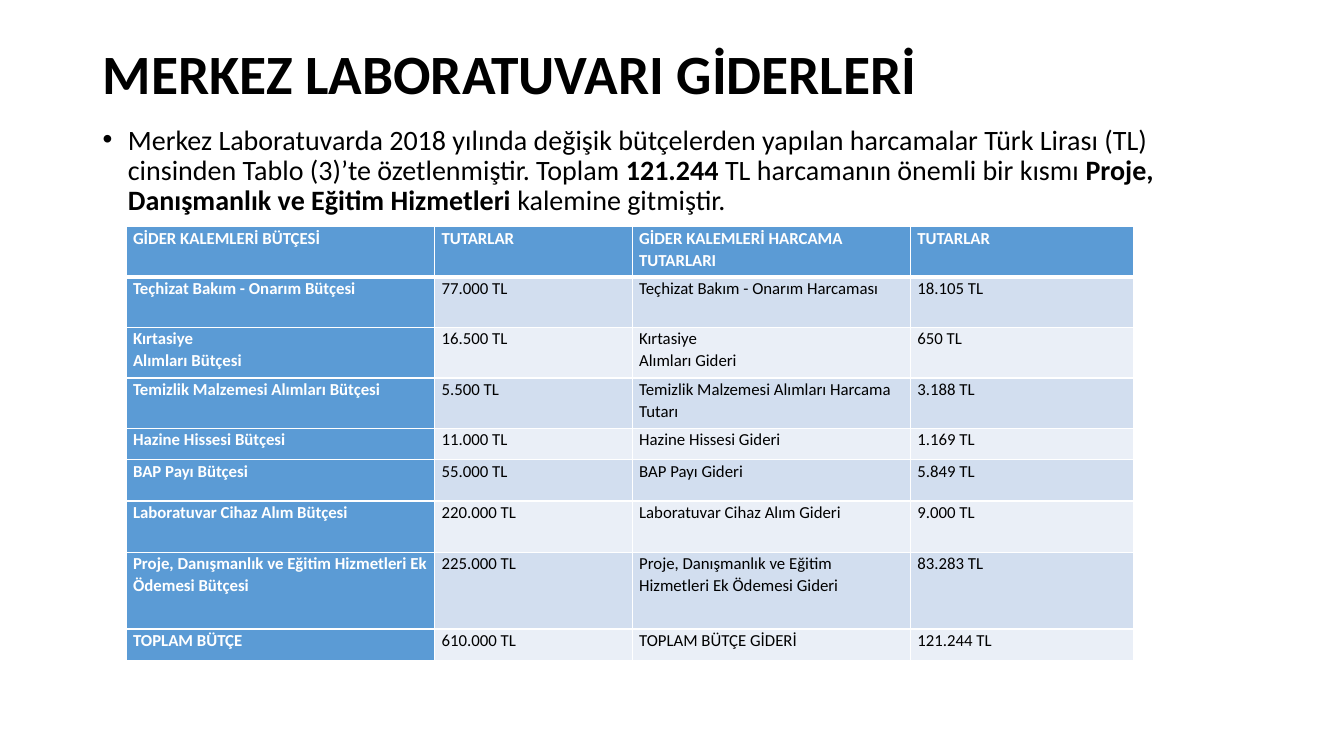
from lxml import etree
from pptx import Presentation
from pptx.dml.color import RGBColor
from pptx.enum.text import MSO_ANCHOR
from pptx.oxml.ns import qn
from pptx.util import Inches, Pt

FONT = "Calibri"
BLACK = RGBColor(0x00, 0x00, 0x00)
WHITE = RGBColor(0xFF, 0xFF, 0xFF)
HEADER_BLUE = RGBColor(0x5B, 0x9B, 0xD5)
BAND_DARK = RGBColor(0xD2, 0xDE, 0xEF)
BAND_LIGHT = RGBColor(0xEA, 0xEF, 0xF7)

TITLE = "MERKEZ LABORATUVARI GİDERLERİ"
SUMMARY = [
    ("Merkez Laboratuvarda 2018 yılında değişik bütçelerden yapılan harcamalar "
     "Türk Lirası (TL) cinsinden Tablo (3)’te özetlenmiştir. Toplam ", False),
    ("121.244", True),
    (" TL harcamanın önemli bir kısmı ", False),
    ("Proje, Danışmanlık ve Eğitim Hizmetleri ", True),
    ("kalemine gitmiştir.", False),
]

COLUMN_WIDTHS = [3.06, 1.96, 2.76, 2.21]
ROW_HEIGHTS = [0.5, 0.5, 0.5, 0.5, 0.31, 0.41, 0.51, 0.76, 0.31]
EXPENSES = [
    ("GİDER KALEMLERİ BÜTÇESİ", "TUTARLAR",
     "GİDER KALEMLERİ HARCAMA TUTARLARI", "TUTARLAR"),
    ("Teçhizat Bakım - Onarım Bütçesi", "77.000 TL",
     "Teçhizat Bakım - Onarım Harcaması", "18.105 TL"),
    ("Kırtasiye\nAlımları Bütçesi", "16.500 TL",
     "Kırtasiye\nAlımları Gideri", "650 TL"),
    ("Temizlik Malzemesi Alımları Bütçesi", "5.500 TL",
     "Temizlik Malzemesi Alımları Harcama Tutarı", "3.188 TL"),
    ("Hazine Hissesi Bütçesi", "11.000 TL", "Hazine Hissesi Gideri", "1.169 TL"),
    ("BAP Payı Bütçesi", "55.000 TL", "BAP Payı Gideri", "5.849 TL"),
    ("Laboratuvar Cihaz Alım Bütçesi", "220.000 TL",
     "Laboratuvar Cihaz Alım Gideri", "9.000 TL"),
    ("Proje, Danışmanlık ve Eğitim Hizmetleri Ek Ödemesi Bütçesi", "225.000 TL",
     "Proje, Danışmanlık ve Eğitim Hizmetleri Ek Ödemesi Gideri", "83.283 TL"),
    ("TOPLAM BÜTÇE", "610.000 TL", "TOPLAM BÜTÇE GİDERİ", "121.244 TL"),
]


def add_run(paragraph, content, size, color=BLACK, bold=False):
    run = paragraph.add_run()
    run.text = content
    run.font.name = FONT
    run.font.size = Pt(size)
    run.font.color.rgb = color
    run.font.bold = bold


def add_text_frame(slide, top, height, anchor):
    """Add a wrapping text box in the slide's main column."""
    box = slide.shapes.add_textbox(Inches(0.92), Inches(top), Inches(11.5), Inches(height))
    frame = box.text_frame
    frame.word_wrap = True
    frame.vertical_anchor = anchor
    frame.paragraphs[0].line_spacing = 0.9
    return frame


def set_bullet(paragraph, indent):
    properties = paragraph._p.get_or_add_pPr()
    properties.set("marL", str(indent))
    properties.set("indent", str(-indent))
    etree.SubElement(properties, qn("a:buFont"), typeface="Arial")
    etree.SubElement(properties, qn("a:buChar"), char="•")


def set_borders(cell, top, bottom):
    """Draw white cell borders; top and bottom are widths in points."""
    properties = cell._tc.get_or_add_tcPr()
    for side, width in (("L", 1), ("R", 1), ("T", top), ("B", bottom)):
        line = etree.SubElement(properties, qn(f"a:ln{side}"), w=str(Pt(width)))
        fill = etree.SubElement(line, qn("a:solidFill"))
        etree.SubElement(fill, qn("a:srgbClr"), val=str(WHITE))


def fill_cell(cell, content, row, column):
    heading = row == 0 or column == 0
    cell.margin_left = cell.margin_right = Inches(0.07)
    cell.margin_top = cell.margin_bottom = Inches(0)
    set_borders(cell, top=3 if row == 1 else 1, bottom=3 if row == 0 else 1)
    cell.fill.solid()
    band = BAND_DARK if row % 2 else BAND_LIGHT
    cell.fill.fore_color.rgb = HEADER_BLUE if heading else band
    frame = cell.text_frame
    for index, line in enumerate(content.split("\n")):
        paragraph = frame.add_paragraph() if index else frame.paragraphs[0]
        paragraph.line_spacing = 1.07
        add_run(paragraph, line, 12, WHITE if heading else BLACK, heading)


def add_expense_table(slide):
    table = slide.shapes.add_table(
        len(EXPENSES), len(COLUMN_WIDTHS), Inches(1.25), Inches(2.25),
        Inches(sum(COLUMN_WIDTHS)), Inches(sum(ROW_HEIGHTS))).table
    table.first_col = True
    for column, width in zip(table.columns, COLUMN_WIDTHS):
        column.width = Inches(width)
    for row, height in zip(table.rows, ROW_HEIGHTS):
        row.height = Inches(height)
    for row, entries in enumerate(EXPENSES):
        for column, content in enumerate(entries):
            fill_cell(table.cell(row, column), content, row, column)


def main():
    deck = Presentation()
    deck.slide_width, deck.slide_height = Inches(13.33), Inches(7.5)
    slide = deck.slides.add_slide(deck.slide_layouts[6])

    title = add_text_frame(slide, 0.4, 0.72, MSO_ANCHOR.MIDDLE)
    add_run(title.paragraphs[0], TITLE, 39.6, bold=True)

    summary = add_text_frame(slide, 1.2, 5.55, MSO_ANCHOR.TOP).paragraphs[0]
    summary.space_before = Pt(10)
    set_bullet(summary, Inches(0.25))
    for content, bold in SUMMARY:
        add_run(summary, content, 20, bold=bold)

    add_expense_table(slide)
    deck.save("out.pptx")


if __name__ == "__main__":
    main()
